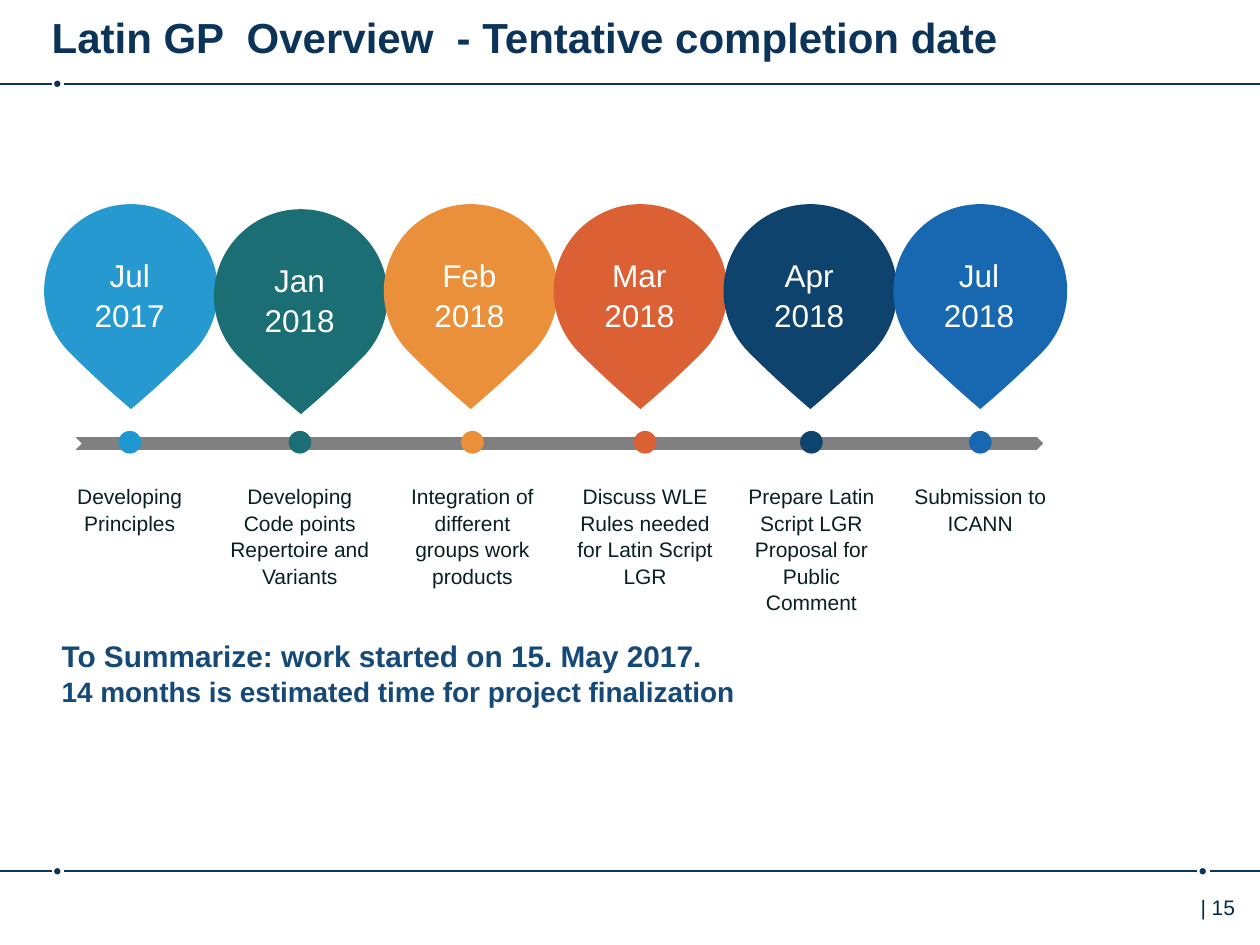
from dataclasses import dataclass

from lxml import etree
from pptx import Presentation
from pptx.dml.color import RGBColor
from pptx.enum.shapes import MSO_CONNECTOR, MSO_SHAPE
from pptx.enum.text import MSO_ANCHOR, MSO_AUTO_SIZE, PP_ALIGN
from pptx.oxml.ns import qn
from pptx.util import Inches, Pt

LINE = MSO_CONNECTOR.STRAIGHT
OVAL, DROP, ARROW = MSO_SHAPE.OVAL, MSO_SHAPE.TEAR, MSO_SHAPE.CHEVRON
LEFT, CENTER = PP_ALIGN.LEFT, PP_ALIGN.CENTER
TOP, MIDDLE = MSO_ANCHOR.TOP, MSO_ANCHOR.MIDDLE
GROW, FIXED = MSO_AUTO_SIZE.SHAPE_TO_FIT_TEXT, MSO_AUTO_SIZE.NONE


@dataclass(frozen=True)
class Theme:
    """Hold the colours, font and type sizes of the slide."""
    font: str = "Arial"
    navy: str = "0C3458"
    page: str = "002B49"
    label: str = "0A1F24"
    note: str = "154A78"
    white: str = "FFFFFF"
    bar: str = "808080"
    title: int = 24
    date: int = 18
    lead: int = 17
    close: int = 16
    small: int = 12


THEME = Theme()

STEPS = [
    ("Jul", "2017", "Developing Principles", "2599D0", "1D98D3", 0.94, 0),
    ("Jan", "2018", "Developing Code points Repertoire and Variants",
     "1B6F74", "1B6F74", 2.29, 0.04),
    ("Feb", "2018", "Integration of different groups work products",
     "EA903A", "EA903A", 3.66, 0),
    ("Mar", "2018", "Discuss WLE Rules needed for Latin Script LGR",
     "DB6033", "DB6033", 5.03, 0),
    ("Apr", "2018", "Prepare Latin Script LGR Proposal for Public Comment",
     "0D436C", "0D436C", 6.35, 0),
    ("Jul", "2018", "Submission to ICANN", "1768B1", "1768B1", 7.69, 0),
]


def assign(item, values):
    """Set each named attribute of an item."""
    for name, value in values.items():
        setattr(item, name, value)


def write(frame, lines, color, align=LEFT, bold=False, space=None, **form):
    """Fill a text frame with (text, size) lines."""
    assign(frame, {"word_wrap": True, "vertical_anchor": TOP, **form})
    for i, (text, size) in enumerate(lines):
        para = frame.add_paragraph() if i else frame.paragraphs[0]
        assign(para, {"alignment": align, "line_spacing": space})
        run = para.add_run()
        run.text = text
        assign(run.font, {"name": THEME.font, "size": Pt(size), "bold": bold})
        run.font.color.rgb = RGBColor.from_string(color)


def add_text(shapes, box, lines, color, **form):
    """Add a text box in the given box."""
    frame = shapes.add_textbox(*map(Inches, box)).text_frame
    write(frame, lines, color, **{"auto_size": GROW, **form})


def add_solid(shapes, kind, box, color):
    """Add a filled shape without an outline."""
    shape = shapes.add_shape(kind, *map(Inches, box))
    shape.shadow.inherit = False
    shape.fill.solid()
    shape.fill.fore_color.rgb = RGBColor.from_string(color)
    shape.line.fill.background()
    return shape


def add_title(slide, box):
    """Place and format the title."""
    title = slide.shapes.title
    assign(title, dict(zip(("left", "top", "width", "height"),
                           map(Inches, box))))
    write(title.text_frame,
          [("Latin GP  Overview  - Tentative completion date", THEME.title)],
          THEME.navy, bold=True, vertical_anchor=MIDDLE, auto_size=FIXED,
          margin_left=0, margin_right=0)


def add_rule(shapes, box, dots):
    """Draw a line across the box, broken around each dot."""
    left, top, width, height = box
    mid = top + height / 2
    start = left
    for dot in dots:
        add_solid(shapes, OVAL, (dot, top, height, height), THEME.navy)
    for dot in [*dots, None]:
        end = left + width if dot is None else dot - 0.02
        line = shapes.add_connector(
            LINE, Inches(start), Inches(mid), Inches(end), Inches(mid))
        line.line.width = Pt(1)
        line.line.color.rgb = RGBColor.from_string(THEME.navy)
        etree.SubElement(line._element.spPr, qn("a:effectLst"))
        start = end + height + 0.05


def add_pin(shapes, box, month, year, color):
    """Group a pointed drop with its date."""
    left, top, width, height = box
    group = shapes.add_group_shape().shapes
    drop = add_solid(group, DROP, box, color)
    drop.rotation = 135
    drop.adjustments[0] = 0.96
    add_text(group, (left + 0.03, top + 0.35, 1.3, 0.71),
             [(month, THEME.date), (year, THEME.date)],
             THEME.white, align=CENTER, space=1.05)


def add_timeline(shapes, box):
    """Draw the bar with its dots, pins and labels."""
    left, top, width, height = box
    size, dot, wide = 1.38, 0.18, 1.3
    pitch = (width - size) / (len(STEPS) - 1)
    add_solid(shapes, ARROW, (left + 0.25, top + 1.85, 7.68, 0.1), THEME.bar)
    for i, (month, year, label, color, mark, x, drop) in enumerate(STEPS):
        add_solid(shapes, OVAL, (x, top + 1.8, dot, dot), mark)
        add_pin(shapes, (left + i * pitch, top + drop, size, size),
                month, year, color)
        add_text(shapes, (x + (dot - wide) / 2, top + 2.16, wide, height - 2.16),
                 [(label, THEME.small)], THEME.label,
                 align=CENTER, space=1.05)


def add_summary(shapes, box):
    """Write the closing statement."""
    add_text(shapes, box,
             [("To Summarize: work started on 15. May 2017.", THEME.lead),
              ("14 months is estimated time for project finalization",
               THEME.close)],
             THEME.note, bold=True, space=Pt(19.8))


def main():
    """Build and save the slide."""
    deck = Presentation()
    assign(deck, {"slide_width": Inches(10), "slide_height": Inches(7.5)})
    slide = deck.slides.add_slide(deck.slide_layouts[5])
    shapes = slide.shapes
    add_rule(shapes, (0, 0.64, 10, 0.05), [0.43])
    add_rule(shapes, (0, 6.89, 10, 0.05), [0.43, 9.52])
    add_text(shapes, (9.43, 7.05, 0.57, 0.4), [("| 15", THEME.small)],
             THEME.page, auto_size=FIXED)
    add_timeline(shapes, (0.35, 1.62, 8.12, 3.27))
    add_summary(shapes, (0.39, 5.02, 7.85, 0.66))
    add_title(slide, (0.41, 0.05, 8.76, 0.49))
    deck.save("out.pptx")


if __name__ == "__main__":
    main()
